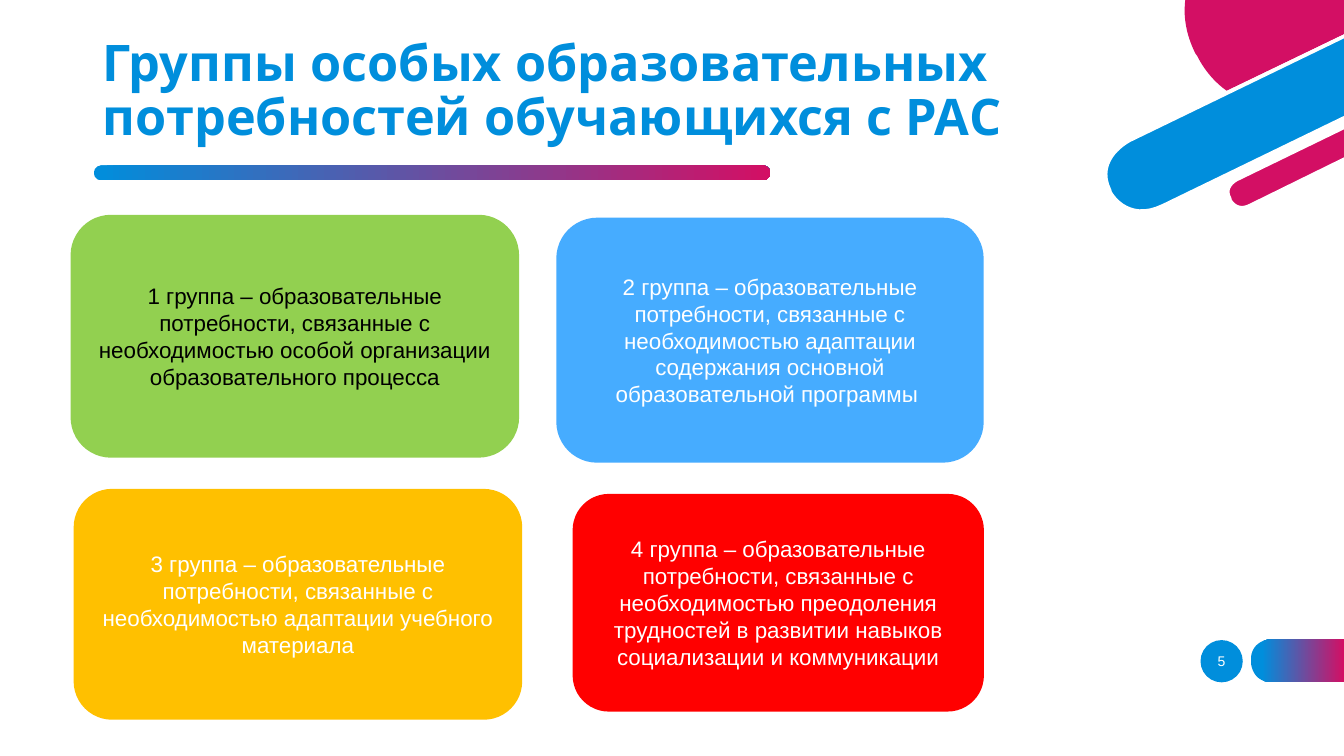
from dataclasses import dataclass

from lxml import etree
from pptx import Presentation
from pptx import util as u
from pptx.dml.color import RGBColor
from pptx.enum import shapes, text


@dataclass(frozen=True)
class Theme:
    blue: str = "008EDC"
    pink: str = "D30F64"
    white: str = "FFFFFF"
    black: str = "000000"
    green: str = "92D050"
    sky: str = "46ACFF"
    amber: str = "FFC000"
    red: str = "FF0000"
    title_font: str = "League Spartan"
    body_font: str = "Arial"
    title_size: int = 36
    card_size: int = 16
    number_size: int = 10
    bar_outline: float = 2.6


THEME = Theme()

TITLE = "Группы особых образовательных потребностей обучающихся с РАС"
TITLE_BOX = (66.2, 28.8, 712.8, 74.2)
NEED = "группа – образовательные потребности, связанные с необходимостью"
CARDS = [
    (1, "особой организации образовательного процесса",
     (50.4, 153.4, 320.4, 173.5), THEME.green, THEME.black),
    (2, "адаптации содержания основной образовательной программы ",
     (397.4, 155.5, 305.3, 175), THEME.sky, THEME.white),
    (3, "адаптации учебного материала",
     (52.6, 349.2, 320.4, 164.9), THEME.amber, THEME.white),
    (4, "преодоления трудностей в развитии навыков социализации и коммуникации",
     (409, 352.8, 293.8, 155.5), THEME.red, THEME.white),
]
SLIDE_NUMBER = "5"
NUMBER_BOX = (851, 457.9, 43.2, 28.8)
NUMBER_DISC = (857.5, 457.2, 30.2, 30.2)
TITLE_RULE = (67, 118.1, 483.1, 10.8)

BLOB = [(855.4, 40.3), ((855.4, 40.3), (861.8, 54.7), (876.2, 64.8)),
        (960, 24.5), (960, 0), (846.7, 0),
        ((845.3, 10.8), (846.7, 23.8), (853.9, 38.2))]
WIDE_BAR = [(807.1, 100.1), ((807.1, 100.1), (781.2, 113), (792.7, 136.1)),
            (792.7, 136.8), ((792.7, 136.8), (804.2, 159.8), (830.9, 146.9)),
            (962, 83.3), (962, 25)]
THIN_BAR = [(962, 90), (883.4, 128.2),
            ((883.4, 128.2), (873.4, 133.2), (878.4, 141.8)),
            (878.4, 142.6), ((878.4, 142.6), (882.7, 151.9), (892.8, 146.9)),
            (962, 112.9)]
NUMBER_TAB = [(908.6, 487.3), (960, 487.3), (960, 456.5), (908.6, 456.5),
              ((908.6, 456.5), (893.5, 456.5), (893.5, 471.6)),
              (893.5, 472.3),
              ((893.5, 472.3), (893.5, 487.3), (908.6, 487.3))]
CURVE_STEPS = 16


def points(values):
    return [u.Pt(value) for value in values]


def color(code):
    return RGBColor.from_string(code)


def paint(shape, fill, outline=None):
    shape.shadow.inherit = False
    shape.fill.solid()
    shape.fill.fore_color.rgb = color(fill)
    if outline:
        shape.line.color.rgb = color(outline)
        shape.line.width = u.Pt(THEME.bar_outline)
    else:
        shape.line.fill.background()


def paint_gradient(shape, start=0):
    paint(shape, THEME.blue)
    shape.fill.gradient()
    shape.fill.gradient_angle = 0
    stops = zip(shape.fill.gradient_stops, (start, 1), (THEME.blue, THEME.pink))
    for stop, position, code in stops:
        stop.position = position
        stop.color.rgb = color(code)


def flatten(outline):
    vertices = []
    for item in outline:
        if len(item) == 2:
            vertices.append(item)
            continue
        controls = (vertices[-1], *item)
        for step in range(1, CURVE_STEPS + 1):
            t = step / CURVE_STEPS
            weights = ((1 - t) ** 3, 3 * t * (1 - t) ** 2, 3 * t * t * (1 - t), t ** 3)
            vertices.append(tuple(
                sum(weight * point[axis] for weight, point in zip(weights, controls))
                for axis in (0, 1)))
    return [points(vertex) for vertex in vertices]


def add_outline(slide, outline):
    start, *rest = flatten(outline)
    builder = slide.shapes.build_freeform(*start)
    builder.add_line_segments(rest, close=True)
    return builder.convert_to_shape()


def write(shape, content, font, size, code, align, bold=False):
    frame = shape.text_frame
    frame.word_wrap = True
    frame.auto_size = text.MSO_AUTO_SIZE.NONE
    frame.vertical_anchor = text.MSO_ANCHOR.MIDDLE
    paragraph = frame.paragraphs[0]
    paragraph.alignment = align
    run = paragraph.add_run()
    run.text = content
    run.font.name = font
    run.font.size = u.Pt(size)
    run.font.bold = bold
    run.font.color.rgb = color(code)
    return paragraph


def add_decor(slide):
    disc = slide.shapes.add_shape(shapes.MSO_SHAPE.OVAL, *points(NUMBER_DISC))
    paint(disc, THEME.blue)
    paint_gradient(add_outline(slide, NUMBER_TAB), 0.12)
    paint(add_outline(slide, BLOB), THEME.pink)
    paint(add_outline(slide, THIN_BAR), THEME.pink, THEME.white)
    paint(add_outline(slide, WIDE_BAR), THEME.blue, THEME.white)
    rule = slide.shapes.add_shape(
        shapes.MSO_SHAPE.ROUNDED_RECTANGLE, *points(TITLE_RULE))
    rule.adjustments[0] = 0.5
    paint_gradient(rule)


def add_title(slide):
    title = slide.shapes.title
    title.left, title.top, title.width, title.height = points(TITLE_BOX)
    paragraph = write(title, TITLE, THEME.title_font, THEME.title_size,
                      THEME.blue, text.PP_ALIGN.LEFT, bold=True)
    paragraph.line_spacing = 0.9


def add_cards(slide):
    for number, need, box, fill, ink in CARDS:
        card = slide.shapes.add_shape(
            shapes.MSO_SHAPE.ROUNDED_RECTANGLE, *points(box))
        paint(card, fill)
        write(card, f"{number} {NEED} {need}", THEME.body_font,
              THEME.card_size, ink, text.PP_ALIGN.CENTER)


def main():
    presentation = Presentation()
    presentation.slide_width, presentation.slide_height = points((960, 540))
    slide = presentation.slides.add_slide(presentation.slide_layouts[5])
    add_decor(slide)
    add_title(slide)
    add_cards(slide)
    number = slide.shapes.add_textbox(*points(NUMBER_BOX))
    write(number, SLIDE_NUMBER, THEME.body_font, THEME.number_size,
          THEME.white, text.PP_ALIGN.CENTER)
    presentation.save("out.pptx")


if __name__ == "__main__":
    main()
